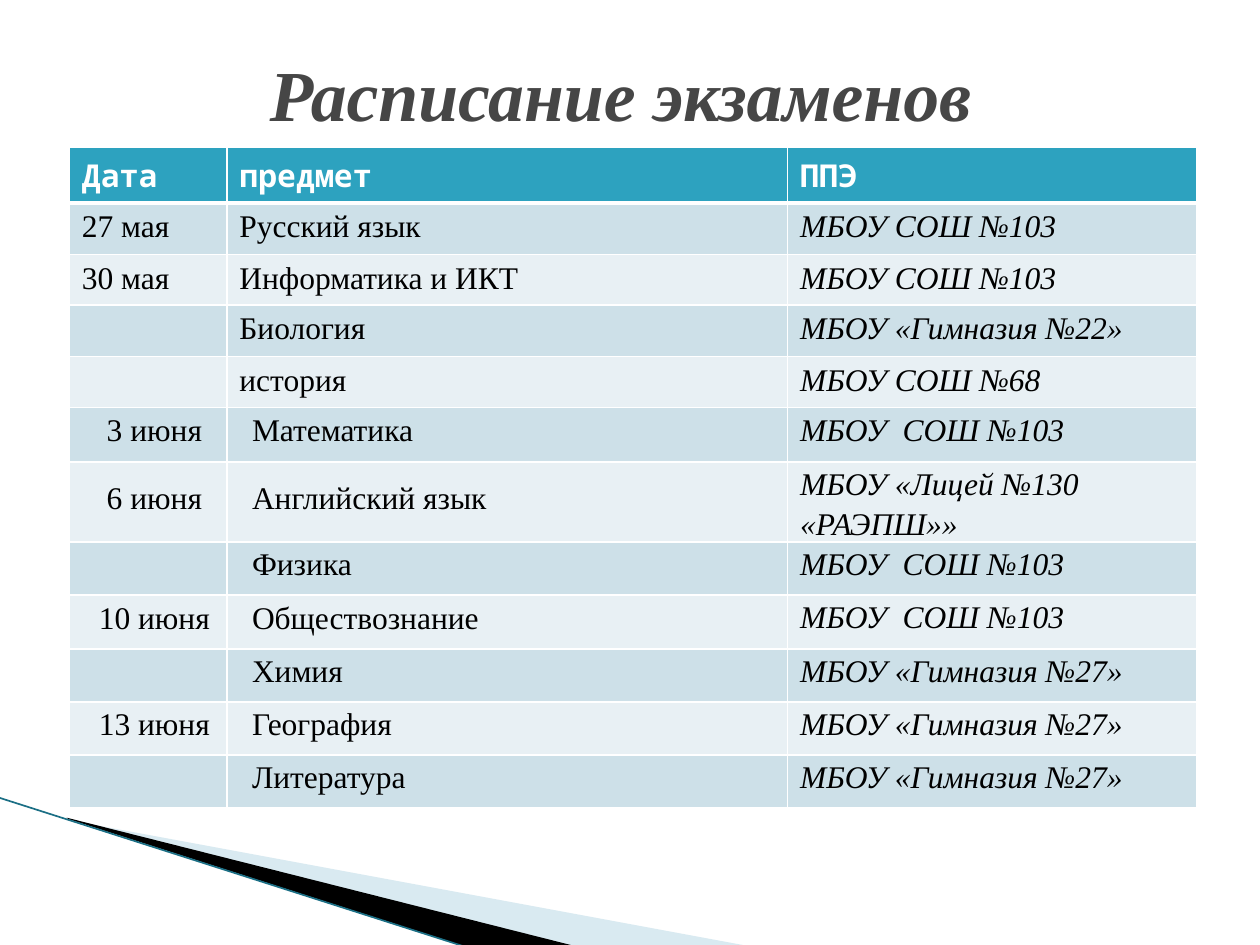
"""Builds the exam timetable slide."""
from lxml import etree
from pptx import Presentation
from pptx.dml.color import RGBColor
from pptx.enum import shapes, text
from pptx.oxml import ns
from pptx.util import Inches, Pt

COLORS = {
    "title": "464646", "header": "2DA2BF", "band_dark": "CDE0E8",
    "band_light": "E8F0F4", "white": "FFFFFF", "black": "000000",
    "wedge": "A0CBDC", "edge": "1B6F85",
}
HEADINGS = ["Дата", "предмет", "ППЭ"]
EXAMS = [
    ("27 мая", "Русский язык", "МБОУ СОШ №103"),
    ("30 мая", "Информатика и ИКТ", "МБОУ СОШ №103"),
    ("", "Биология", "МБОУ «Гимназия №22»"),
    ("", "история", "МБОУ СОШ №68"),
    ("3 июня", "Математика", "МБОУ  СОШ №103"),
    ("6 июня", "Английский язык", "МБОУ «Лицей №130 «РАЭПШ»»"),
    ("", "Физика", "МБОУ  СОШ №103"),
    ("10 июня", "Обществознание", "МБОУ  СОШ №103"),
    ("", "Химия", "МБОУ «Гимназия №27»"),
    ("13 июня", "География", "МБОУ «Гимназия №27»"),
    ("", "Литература", "МБОУ «Гимназия №27»"),
]
COLUMN_WIDTHS = [1.25, 4.45, 3.25]
ROW_HEIGHTS = [0.43] + [0.41, 0.4] * 2 + [0.43, 0.63] + [0.42, 0.43, 0.42, 0.42, 0.42]
FIRST_JUNE_ROW = 5
WEDGES = [
    ("wedge", 40, (0.78, 5.47, 4.16, 1.58),
     [(0.55, 6.51), (5.95, 7.51), (4.56, 7.51), (0.55, 6.5)]),
    ("black", 100, (-0.06, 6.33, 4.16, 0.92),
     [(0.53, 6.49), (4.57, 7.51), (3.72, 7.52), (0.54, 6.5)]),
]


def add_run(paragraph, words, size, font, color, bold=False, italic=False):
    run = paragraph.add_run()
    run.text = words
    run.font.size = Pt(size)
    run.font.name = font
    run.font.bold = bold
    run.font.italic = italic
    run.font.color.rgb = RGBColor.from_string(COLORS[color])


def set_borders(cell, widths):
    properties = cell._tc.get_or_add_tcPr()
    for side, width in widths.items():
        line = etree.SubElement(properties, ns.qn(f"a:ln{side}"), w=str(Pt(width)))
        fill = etree.SubElement(line, ns.qn("a:solidFill"))
        etree.SubElement(fill, ns.qn("a:srgbClr"), val=COLORS["white"])


presentation = Presentation()
presentation.slide_width = Inches(10)
presentation.slide_height = Inches(7.5)
slide = presentation.slides.add_slide(presentation.slide_layouts[6])

for color, opacity, frame, points in WEDGES:
    corners = [(Inches(x), Inches(y)) for x, y in points]
    builder = slide.shapes.build_freeform(*corners[0])
    builder.add_line_segments(corners[1:], close=True)
    wedge = builder.convert_to_shape()
    left, top, width, height = [Inches(length) for length in frame]
    shift_x, shift_y = wedge.left - left, wedge.top - top
    wedge.left, wedge.top, wedge.width, wedge.height = left, top, width, height
    properties = wedge._element.spPr
    outline = properties.find(".//" + ns.qn("a:path"))
    outline.set("w", str(width))
    outline.set("h", str(height))
    for point in outline.iter(ns.qn("a:pt")):
        point.set("x", str(int(point.get("x")) + shift_x))
        point.set("y", str(int(point.get("y")) + shift_y))
    wedge.shadow.inherit = False
    wedge.fill.solid()
    wedge.fill.fore_color.rgb = RGBColor.from_string(COLORS[color])
    wedge.line.fill.background()
    if opacity < 100:
        fill_color = properties.find(".//" + ns.qn("a:srgbClr"))
        etree.SubElement(fill_color, ns.qn("a:alpha"), val=str(opacity * 1000))

edge = slide.shapes.add_connector(
    shapes.MSO_CONNECTOR.STRAIGHT, Inches(-0.01), Inches(6.33), Inches(3.71), Inches(7.52))
edge.line.color.rgb = RGBColor.from_string(COLORS["edge"])
edge.line.width = Pt(0.95)
etree.SubElement(edge._element.spPr, ns.qn("a:effectLst"))

table = slide.shapes.add_table(
    len(ROW_HEIGHTS), len(COLUMN_WIDTHS), Inches(0.55), Inches(1.17),
    Inches(sum(COLUMN_WIDTHS)), Inches(sum(ROW_HEIGHTS))).table
for column, width in zip(table.columns, COLUMN_WIDTHS):
    column.width = Inches(width)
for row, height in zip(table.rows, ROW_HEIGHTS):
    row.height = Inches(height)

for row_index, entries in enumerate([HEADINGS] + EXAMS):
    is_header = row_index == 0
    band = "header" if is_header else "band_dark" if row_index % 2 else "band_light"
    for column_index, words in enumerate(entries):
        cell = table.cell(row_index, column_index)
        set_borders(cell, {"L": 1, "R": 1, "T": 3 if row_index == 1 else 1,
                           "B": 3 if is_header else 1})
        cell.fill.solid()
        cell.fill.fore_color.rgb = RGBColor.from_string(COLORS[band])
        if not words:
            continue
        is_place = column_index == 2
        paragraph = cell.text_frame.paragraphs[0]
        if row_index >= FIRST_JUNE_ROW:
            inset = Inches(0 if is_place else 0.1)
            cell.margin_left = cell.margin_right = cell.margin_bottom = inset
            cell.margin_top = 0
            if not is_place:
                cell.vertical_anchor = text.MSO_ANCHOR.MIDDLE
            paragraph._p.get_or_add_pPr().set("marL", str(Inches(0.1)))
            paragraph.line_spacing = 1.15
            if column_index == 0:
                paragraph.alignment = text.PP_ALIGN.CENTER
        if is_header:
            add_run(paragraph, words, 18, "Noto Sans Mono", "white", bold=True)
        else:
            add_run(paragraph, words, 18, "Times New Roman", "black", italic=is_place)

title = slide.shapes.add_textbox(Inches(0.5), Inches(0.3), Inches(9), Inches(0.87))
title.text_frame.word_wrap = True
title.text_frame.vertical_anchor = text.MSO_ANCHOR.MIDDLE
heading = title.text_frame.paragraphs[0]
heading.alignment = text.PP_ALIGN.CENTER
add_run(heading, "Расписание экзаменов ", 41, "Times New Roman", "title", bold=True, italic=True)

presentation.save("out.pptx")
